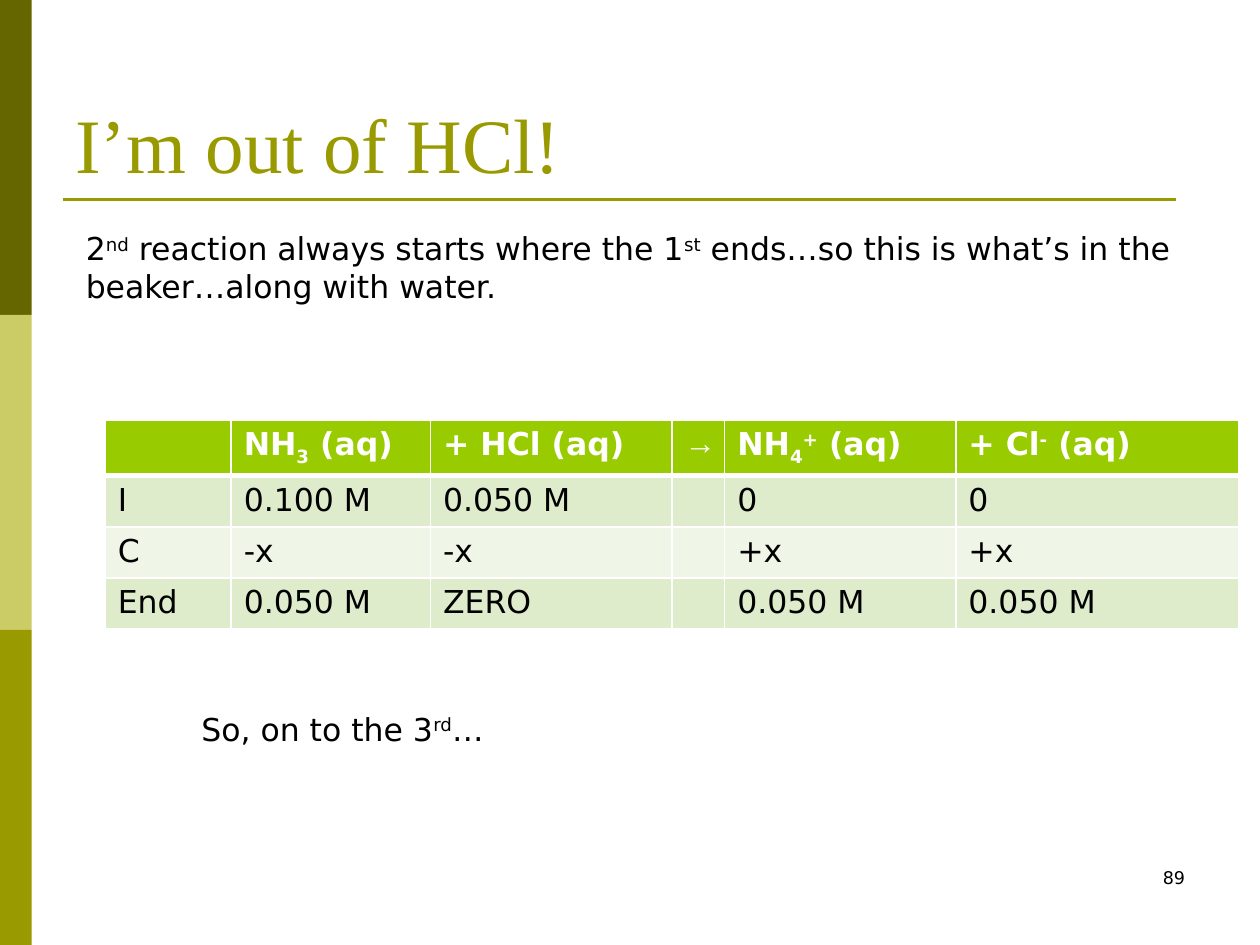
from lxml import etree
from pptx import Presentation
from pptx import util as u
from pptx.dml import color
from pptx.enum import shapes, text
from pptx.oxml import ns

OLIVE, WHITE, BLACK = "999900", "FFFFFF", "000000"
SANS, SERIF = "DejaVu Sans", "Times New Roman"
SUB, SUPER = -25, 30


def rgb(code):
    return color.RGBColor.from_string(code)


class Page:
    """Holds the text style and the current slide, and adds elements to it."""

    def __init__(self, slide, font=SANS, size=18, ink=BLACK):
        self.slide = slide
        self.font, self.size, self.ink = font, size, ink

    def add_spans(self, para, spans, font=None, size=None, ink=None, bold=False):
        """Add runs; each span is a string or a (string, baseline percent) pair."""
        for item in spans:
            words, shift = (item, 0) if isinstance(item, str) else item
            span = para.add_run()
            span.text = words
            span.font.name = font or self.font
            span.font.size = u.Pt(size or self.size)
            span.font.color.rgb = rgb(ink or self.ink)
            span.font.bold = bold
            if shift:
                span.font._element.set("baseline", str(shift * 1000))

    def label(self, left, top, width, height, spans, wrap=True,
              anchor=text.MSO_ANCHOR.TOP, align=text.PP_ALIGN.LEFT, **style):
        box = self.slide.shapes.add_textbox(
            u.Cm(left), u.Cm(top), u.Cm(width), u.Cm(height))
        frame = box.text_frame
        frame.word_wrap = wrap
        frame.vertical_anchor = anchor
        para = frame.paragraphs[0]
        para.alignment = align
        self.add_spans(para, spans, **style)

    def bar(self, left, top, width, height, fill):
        box = self.slide.shapes.add_shape(
            shapes.MSO_SHAPE.RECTANGLE,
            u.Cm(left), u.Cm(top), u.Cm(width), u.Cm(height))
        box.shadow.inherit = False
        box.fill.solid()
        box.fill.fore_color.rgb = rgb(fill)
        box.line.fill.background()

    def rule(self, left, right, top, ink, weight):
        line = self.slide.shapes.add_connector(
            shapes.MSO_CONNECTOR.STRAIGHT,
            u.Cm(left), u.Cm(top), u.Cm(right), u.Cm(top))
        line.line.color.rgb = rgb(ink)
        line.line.width = u.Pt(weight)
        etree.SubElement(line._element.spPr, ns.qn("a:effectLst"))

    def border(self, cell, **weights):
        """Draw white cell edges; weights maps L, R, T, B to points."""
        props = cell._tc.get_or_add_tcPr()
        for side, weight in weights.items():
            edge = etree.SubElement(
                props, ns.qn(f"a:ln{side}"), w=str(u.Pt(weight)))
            fill = etree.SubElement(edge, ns.qn("a:solidFill"))
            etree.SubElement(fill, ns.qn("a:srgbClr"), val=WHITE)

    def table(self, left, top, widths, row_height, rows, fills):
        """Add a table whose first row is a bold white header."""
        grid = self.slide.shapes.add_table(
            len(rows), len(widths), u.Cm(left), u.Cm(top),
            u.Cm(sum(widths)), u.Cm(row_height * len(rows))).table
        for column, width in zip(grid.columns, widths):
            column.width = u.Cm(width)
        for i, row in enumerate(rows):
            grid.rows[i].height = u.Cm(row_height)
            for j, spans in enumerate(row):
                cell = grid.cell(i, j)
                self.border(cell, L=1, R=1, T=3 if i == 1 else 1,
                            B=3 if i == 0 else 1)
                cell.fill.solid()
                cell.fill.fore_color.rgb = rgb(fills[i])
                self.add_spans(cell.text_frame.paragraphs[0], spans,
                               font=SERIF if spans == ["→"] else None,
                               ink=WHITE if i == 0 else None, bold=i == 0)


def main():
    deck = Presentation()
    deck.slide_width, deck.slide_height = u.Cm(25.4), u.Cm(19.05)
    page = Page(deck.slides.add_slide(deck.slide_layouts[6]))

    bar_height = 19.05 / 3
    for i, fill in enumerate(["666600", "CCCC66", OLIVE]):
        page.bar(0, i * bar_height, 0.64, bar_height, fill)
    page.rule(1.27, 23.7, 4.02, OLIVE, 1.5)
    page.label(1.27, 0.76, 22.86, 3.18, ["I’m out of HCl!"],
               anchor=text.MSO_ANCHOR.BOTTOM, font=SERIF, size=44, ink=OLIVE)

    header = [[], ["NH", ("3", SUB), " (aq)"], ["+ HCl (aq)"], ["→"],
              ["NH", ("4", SUB), ("+", SUPER), " (aq)"],
              ["+ Cl", ("-", SUPER), " (aq)"]]
    stages = [["I", "0.100 M", "0.050 M", "", "0", "0"],
              ["C", "-x", "-x", "", "+x", "+x"],
              ["End", "0.050 M", "ZERO", "", "0.050 M", "0.050 M"]]
    body = [[[words] if words else [] for words in row] for row in stages]
    page.table(2.12, 8.47, [2.54, 4.02, 4.87, 1.06, 4.66, 5.71], 1.03,
               [header] + body, ["99CC00", "DEECCC", "EFF6E7", "DEECCC"])

    page.label(18.21, 17.36, 5.93, 1.27, ["89"],
               align=text.PP_ALIGN.RIGHT, size=10)
    page.label(1.48, 4.5, 22.65, 1.8,
               ["2", ("nd", SUPER), " reaction always starts where the 1",
                ("st", SUPER),
                " ends…so this is what’s in the beaker…along with water."])
    page.label(3.81, 14.18, 6.5, 1.03,
               ["So, on to the 3", ("rd", SUPER), "…"], wrap=False)
    deck.save("out.pptx")


if __name__ == "__main__":
    main()
